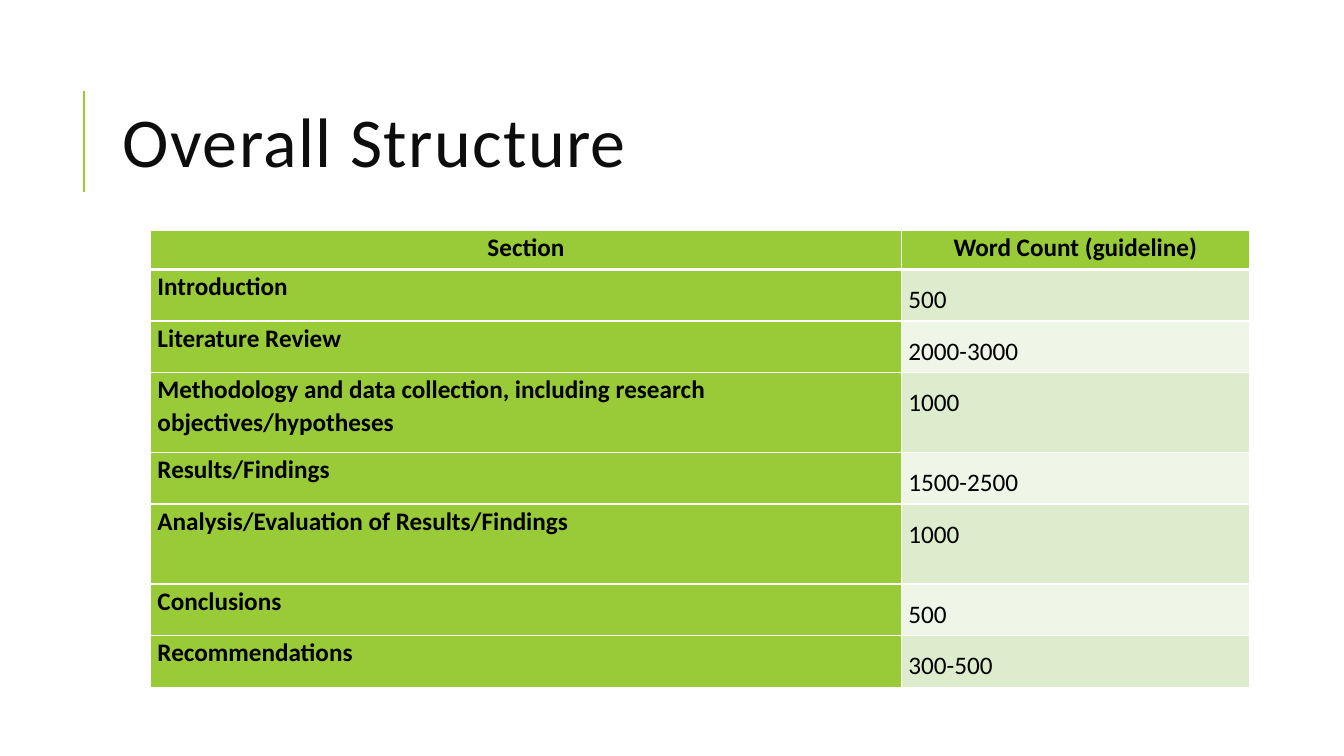
from lxml.etree import SubElement
from pptx import Presentation
from pptx.dml.color import RGBColor
from pptx.enum.shapes import MSO_CONNECTOR as CONN
from pptx.enum.text import MSO_ANCHOR as ANCHOR, PP_ALIGN as ALIGN
from pptx.oxml.ns import qn
from pptx.util import Pt

COLORS = {
    "green": "99CB38",
    "band_dark": "DEECCE",
    "band_light": "EFF6E8",
    "white": "FFFFFF",
    "title": "0D0D0D",
    "black": "000000",
}
FONT = "Calibri"
HEADER = ("Section", "Word Count (guideline)")
SECTIONS = [
    ("Introduction", "500"),
    ("Literature Review", "2000-3000"),
    ("Methodology and data collection, including research objectives/hypotheses", "1000"),
    ("Results/Findings", "1500-2500"),
    ("Analysis/Evaluation of Results/Findings", "1000"),
    ("Conclusions", "500"),
    ("Recommendations", "300-500"),
]
COL_WIDTHS = (536.4, 248.4)
HEADER_HEIGHT, ROW_HEIGHT, TALL_HEIGHT = 28, 36.8, 57.2
TALL_ROWS = (3, 5)


def rgb(name):
    return RGBColor.from_string(COLORS[name])


def write(tf, text, size=18, color="black", bold=False, align=ALIGN.LEFT,
          line=1.0, tracking=None):
    p = tf.paragraphs[0]
    p.alignment = align
    p.line_spacing = line
    p.space_before = p.space_after = Pt(0)
    r = p.add_run()
    r.text = text
    r.font.name = FONT
    r.font.size = Pt(size)
    r.font.bold = bold
    r.font.color.rgb = rgb(color)
    if tracking:
        r.font._element.set("spc", str(tracking))


def add_title(slide, text):
    sp = slide.shapes.title
    sp.left, sp.top, sp.width, sp.height = Pt(80.6), Pt(46), Pt(765.4), Pt(118)
    tf = sp.text_frame
    tf.word_wrap = True
    tf.vertical_anchor = ANCHOR.MIDDLE
    write(tf, text, size=50, color="title", line=0.8, tracking=100)


def add_rule(slide, x, top, bottom):
    line = slide.shapes.add_connector(CONN.STRAIGHT, Pt(x), Pt(bottom), Pt(x), Pt(top))
    line.line.color.rgb = rgb("green")
    line.line.width = Pt(1.5)
    SubElement(line._element.spPr, qn("a:effectLst"))


def set_borders(cell, **widths):
    tc_pr = cell._tc.get_or_add_tcPr()
    for side in "LRTB":
        ln = SubElement(tc_pr, qn(f"a:ln{side}"), w=str(Pt(widths.get(side, 1))))
        fill = SubElement(ln, qn("a:solidFill"))
        SubElement(fill, qn("a:srgbClr"), val=COLORS["white"])


def format_cell(cell, text, fill, borders, **fmt):
    cell.margin_left = cell.margin_right = Pt(5)
    cell.margin_top = cell.margin_bottom = Pt(0)
    set_borders(cell, **borders)
    cell.fill.solid()
    cell.fill.fore_color.rgb = rgb(fill)
    write(cell.text_frame, text, **fmt)


def add_section_table(slide, left, top):
    heights = [HEADER_HEIGHT] + [
        TALL_HEIGHT if i in TALL_ROWS else ROW_HEIGHT
        for i in range(1, len(SECTIONS) + 1)
    ]
    table = slide.shapes.add_table(
        len(heights), len(COL_WIDTHS), Pt(left), Pt(top),
        Pt(sum(COL_WIDTHS)), Pt(sum(heights))).table
    for column, width in zip(table.columns, COL_WIDTHS):
        column.width = Pt(width)
    for row, height in zip(table.rows, heights):
        row.height = Pt(height)
    for c, text in enumerate(HEADER):
        format_cell(table.cell(0, c), text, "green", {"B": 3},
                    bold=True, align=ALIGN.CENTER, line=1.07)
    for i, (section, count) in enumerate(SECTIONS, 1):
        borders = {"T": 3} if i == 1 else {}
        band = "band_dark" if i % 2 else "band_light"
        format_cell(table.cell(i, 0), section, "green", borders, bold=True, line=1.07)
        format_cell(table.cell(i, 1), count, band, borders, line=1.5)


def main():
    prs = Presentation()
    prs.slide_width, prs.slide_height = Pt(960), Pt(540)
    slide = prs.slides.add_slide(prs.slide_layouts[5])
    add_rule(slide, 60, 65, 137)
    add_title(slide, "Overall Structure")
    add_section_table(slide, 107.5, 164.5)
    prs.save("out.pptx")


if __name__ == "__main__":
    main()
